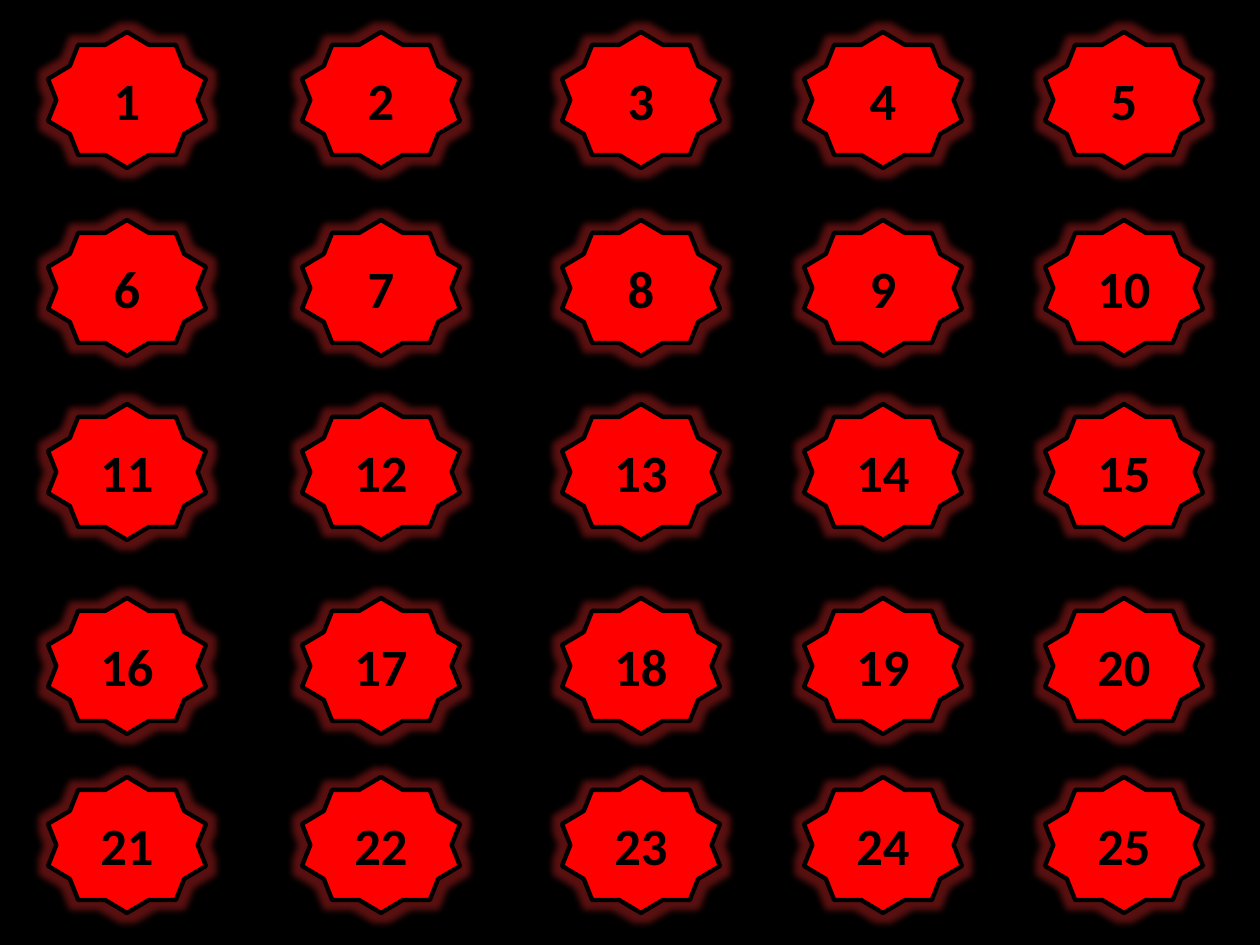
"""Build a black slide with a grid of 25 glowing numbered stars."""
import pptx
import pptx.dml.color
import pptx.enum.shapes
import pptx.enum.text
import pptx.oxml
import pptx.oxml.ns
import pptx.util

COLUMNS = [48, 302, 562, 804, 1045]
ROWS = [32, 220, 404, 598, 777]
STAR_W, STAR_H = 158, 136
SLIDE_W, SLIDE_H = 1260, 945
EMU_PER_PX = 914400 / 126

BLACK = pptx.dml.color.RGBColor(0x00, 0x00, 0x00)
RED = pptx.dml.color.RGBColor(0xFF, 0x00, 0x00)
GLOW = pptx.dml.color.RGBColor(0xE1, 0x28, 0x28)


def px(n):
    return pptx.util.Emu(round(n * EMU_PER_PX))


def add_effects(sp):
    sp.shadow.inherit = False
    effects = sp._element.spPr.find(pptx.oxml.ns.qn("a:effectLst"))
    color = '<a:srgbClr val="{}"><a:alpha val="40000"/></a:srgbClr>'
    glow = f'<a:glow {{}} rad="{pptx.util.Pt(8)}">{color.format(GLOW)}</a:glow>'
    shadow = (
        f'<a:outerShdw {{}} blurRad="{pptx.util.Pt(4)}" dist="{pptx.util.Pt(3)}" '
        f'dir="5400000" rotWithShape="0">{color.format(BLACK)}</a:outerShdw>'
    )
    for xml in (glow, shadow):
        effects.append(pptx.oxml.parse_xml(xml.format(pptx.oxml.ns.nsdecls("a"))))


def add_star(s, number, x, y):
    sp = s.shapes.add_shape(
        pptx.enum.shapes.MSO_SHAPE.STAR_10_POINT, px(x), px(y), px(STAR_W), px(STAR_H)
    )
    sp.fill.solid()
    sp.fill.fore_color.rgb = RED
    sp.line.color.rgb = BLACK
    sp.line.width = pptx.util.Pt(2.5)
    add_effects(sp)
    tf = sp.text_frame
    tf.text = str(number)
    tf.word_wrap = False
    tf.vertical_anchor = pptx.enum.text.MSO_ANCHOR.MIDDLE
    p = tf.paragraphs[0]
    p.alignment = pptx.enum.text.PP_ALIGN.CENTER
    font = p.runs[0].font
    font.name = "Calibri"
    font.size = pptx.util.Pt(30)
    font.bold = True
    font.color.rgb = BLACK


def main():
    prs = pptx.Presentation()
    prs.slide_width, prs.slide_height = px(SLIDE_W), px(SLIDE_H)
    s = prs.slides.add_slide(prs.slide_layouts[6])
    s.background.fill.solid()
    s.background.fill.fore_color.rgb = BLACK
    for row, y in enumerate(ROWS):
        for col, x in enumerate(COLUMNS):
            add_star(s, row * len(COLUMNS) + col + 1, x, y)
    prs.save("out.pptx")


if __name__ == "__main__":
    main()
